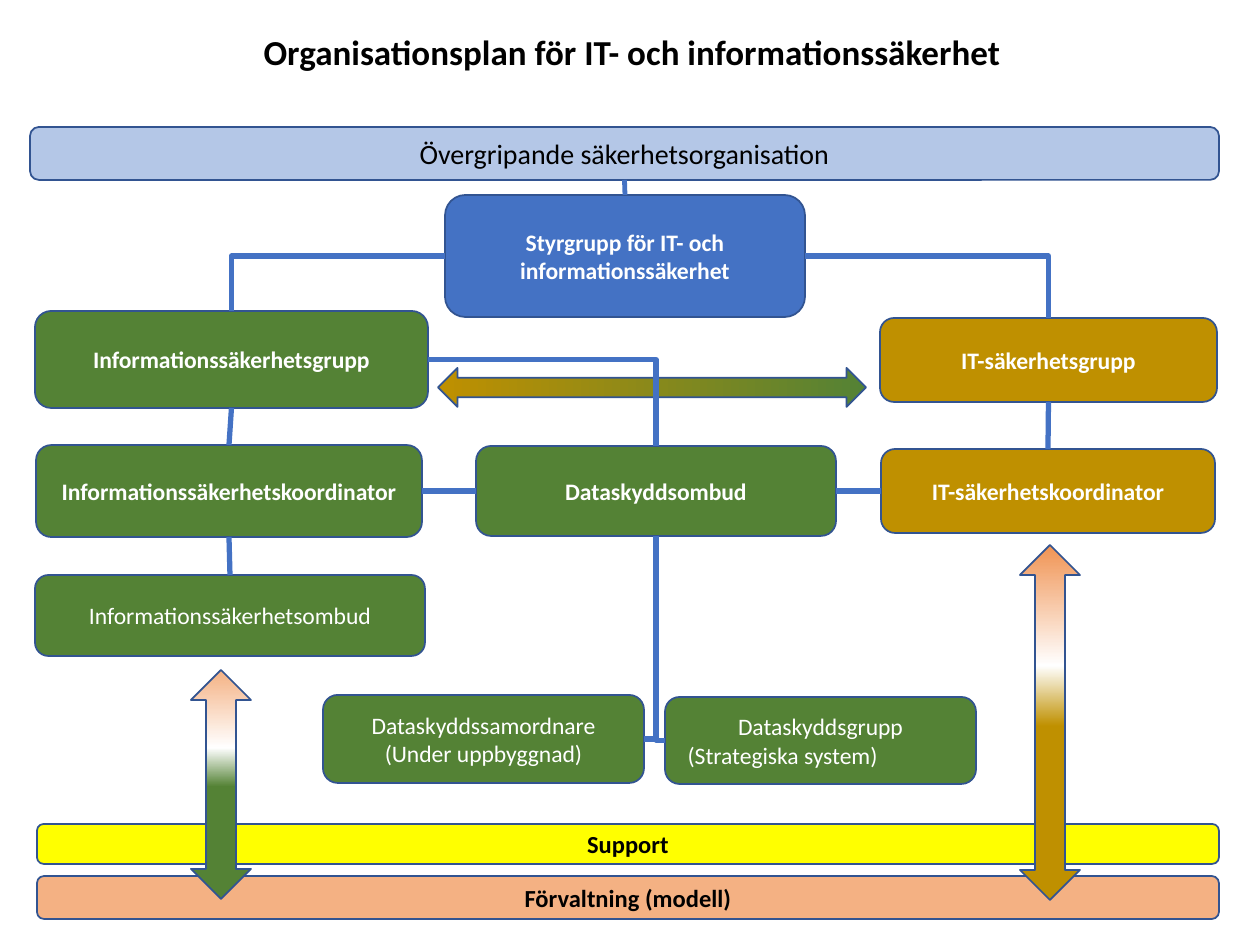
"""Build the organisation chart slide for IT and information security."""
from lxml import etree
from pptx import Presentation
from pptx.dml.color import RGBColor
from pptx.enum.shapes import MSO_CONNECTOR, MSO_SHAPE
from pptx.enum.text import MSO_ANCHOR, PP_ALIGN
from pptx.oxml.ns import qn
from pptx.util import Emu, Pt

ROUNDED = MSO_SHAPE.ROUNDED_RECTANGLE
LEFT_RIGHT, UP_DOWN = MSO_SHAPE.LEFT_RIGHT_ARROW, MSO_SHAPE.UP_DOWN_ARROW
STRAIGHT, ELBOW = MSO_CONNECTOR.STRAIGHT, MSO_CONNECTOR.ELBOW
CENTER, LEFT_ALIGN, MIDDLE = PP_ALIGN.CENTER, PP_ALIGN.LEFT, MSO_ANCHOR.MIDDLE
TOP, LEFT, BOTTOM, RIGHT = range(4)

PX_PER_INCH = 126
FONT = "Calibri"
BLACK = RGBColor(0x00, 0x00, 0x00)
WHITE = RGBColor(0xFF, 0xFF, 0xFF)
OUTLINE = RGBColor(0x32, 0x54, 0x91)
BLUE = RGBColor(0x44, 0x72, 0xC4)
LIGHT_BLUE = RGBColor(0xB4, 0xC7, 0xE7)
GREEN = RGBColor(0x54, 0x82, 0x35)
GOLD = RGBColor(0xBF, 0x90, 0x00)
YELLOW = RGBColor(0xFF, 0xFF, 0x00)
PEACH = RGBColor(0xF4, 0xB1, 0x83)
ORANGE = RGBColor(0xF0, 0x93, 0x53)

ROLES = {
    "group": ("Informationssäkerhetsgrupp", (35, 311, 393, 97), GREEN, True),
    "board": ("Styrgrupp för IT- och informationssäkerhet", (445, 195, 360, 122), BLUE, True),
    "it_group": ("IT-säkerhetsgrupp", (880, 318, 337, 84), GOLD, True),
    "officer": ("Dataskyddsombud", (476, 446, 360, 90), GREEN, True),
    "coordinator": ("Informationssäkerhetskoordinator", (36, 445, 386, 92), GREEN, True),
    "it_coordinator": ("IT-säkerhetskoordinator", (881, 449, 334, 84), GOLD, True),
    "data_coordinator": ("Dataskyddssamordnare\n(Under uppbyggnad)", (323, 695, 321, 88), GREEN, False),
    "data_group": ("Dataskyddsgrupp\n(Strategiska system)", (665, 697, 311, 87), GREEN, False),
    "representative": ("Informationssäkerhetsombud", (35, 575, 390, 81), GREEN, False),
}
LINKS = [
    (STRAIGHT, "header", BOTTOM, "board", TOP, 2.75),
    (ELBOW, "board", LEFT, "group", TOP, 3),
    (ELBOW, "board", RIGHT, "it_group", TOP, 3),
    (ELBOW, "group", RIGHT, "officer", TOP, 3),
    (ELBOW, "data_coordinator", RIGHT, "officer", BOTTOM, 3),
    (ELBOW, "data_group", LEFT, "officer", BOTTOM, 2.5),
    (STRAIGHT, "coordinator", RIGHT, "officer", LEFT, 3),
    (STRAIGHT, "officer", RIGHT, "it_coordinator", LEFT, 3),
    (STRAIGHT, "group", BOTTOM, "coordinator", TOP, 3),
    (STRAIGHT, "it_group", BOTTOM, "it_coordinator", TOP, 3),
    (STRAIGHT, "coordinator", BOTTOM, "representative", TOP, 3),
]


def px(length):
    return Emu(round(length * 914400 / PX_PER_INCH))


def write_text(shape, text, size, color, bold):
    text_frame = shape.text_frame
    text_frame.word_wrap = True
    text_frame.vertical_anchor = MIDDLE
    text_frame.text = text
    for paragraph in text_frame.paragraphs:
        paragraph.alignment = CENTER
        for run in paragraph.runs:
            run.font.name = FONT
            run.font.size = Pt(size)
            run.font.bold = bold
            run.font.color.rgb = color


def add_title(slide, text, bounds):
    title = slide.shapes.add_textbox(*map(px, bounds))
    write_text(title, text, 20, BLACK, True)
    title.text_frame.paragraphs[0].line_spacing = 0.9


def add_outlined(slide, kind, bounds):
    shape = slide.shapes.add_shape(kind, *map(px, bounds))
    shape.shadow.inherit = False
    shape.line.color.rgb = OUTLINE
    shape.line.width = Pt(1)
    return shape


def add_box(slide, text, bounds, fill, bold, size=13.5, color=WHITE):
    box = add_outlined(slide, ROUNDED, bounds)
    box.fill.solid()
    box.fill.fore_color.rgb = fill
    write_text(box, text, size, color, bold)
    return box


def add_gradient_arrow(slide, kind, bounds, angle, stops):
    arrow = add_outlined(slide, kind, bounds)
    arrow.fill.gradient()
    arrow.fill.gradient_angle = angle
    stop_list = arrow._element.spPr.find(qn("a:gradFill")).find(qn("a:gsLst"))
    for old_stop in list(stop_list):
        stop_list.remove(old_stop)
    for percent, color in stops:
        stop = etree.SubElement(stop_list, qn("a:gs"), pos=str(percent * 1000))
        etree.SubElement(stop, qn("a:srgbClr"), val=str(color))


def add_link(slide, kind, start, start_side, end, end_side, width):
    link = slide.shapes.add_connector(kind, 0, 0, 0, 0)
    link.begin_connect(start, start_side)
    link.end_connect(end, end_side)
    link.line.color.rgb = BLUE
    link.line.width = Pt(width)
    properties = link._element.spPr
    if kind == ELBOW:
        properties.find(qn("a:prstGeom")).set("prst", "bentConnector2")
    etree.SubElement(properties, qn("a:effectLst"))


def main():
    presentation = Presentation()
    presentation.slide_width, presentation.slide_height = px(1260), px(945)
    slide = presentation.slides.add_slide(presentation.slide_layouts[6])

    add_gradient_arrow(slide, LEFT_RIGHT, (438, 368, 428, 39), 0, [(0, GOLD), (100, GREEN)])
    add_title(slide, "Organisationsplan för IT- och informationssäkerhet", (89, 6, 1086, 97))
    boxes = {name: add_box(slide, *role) for name, role in ROLES.items()}
    boxes["header"] = add_box(slide, "Övergripande säkerhetsorganisation", (30, 127, 1189, 53),
                              LIGHT_BLUE, False, 16, BLACK)
    add_box(slide, "Support", (37, 824, 1182, 40), YELLOW, True, 14, BLACK)
    add_box(slide, "Förvaltning (modell)", (37, 876, 1182, 43), PEACH, True, 14, BLACK)

    system_line = boxes["data_group"].text_frame.paragraphs[1]
    system_line.alignment = LEFT_ALIGN
    system_line._p.get_or_add_pPr().set("marL", str(px(6)))

    for kind, start, start_side, end, end_side, width in LINKS:
        add_link(slide, kind, boxes[start], start_side, boxes[end], end_side, width)
    for bounds, top_color, bottom_color in [
        ((1020, 545, 60, 355), ORANGE, GOLD),
        ((191, 670, 60, 229), PEACH, GREEN),
    ]:
        stops = [(0, top_color), (34, WHITE), (51, bottom_color), (100, bottom_color)]
        add_gradient_arrow(slide, UP_DOWN, bounds, 270, stops)

    presentation.save("out.pptx")


if __name__ == "__main__":
    main()
